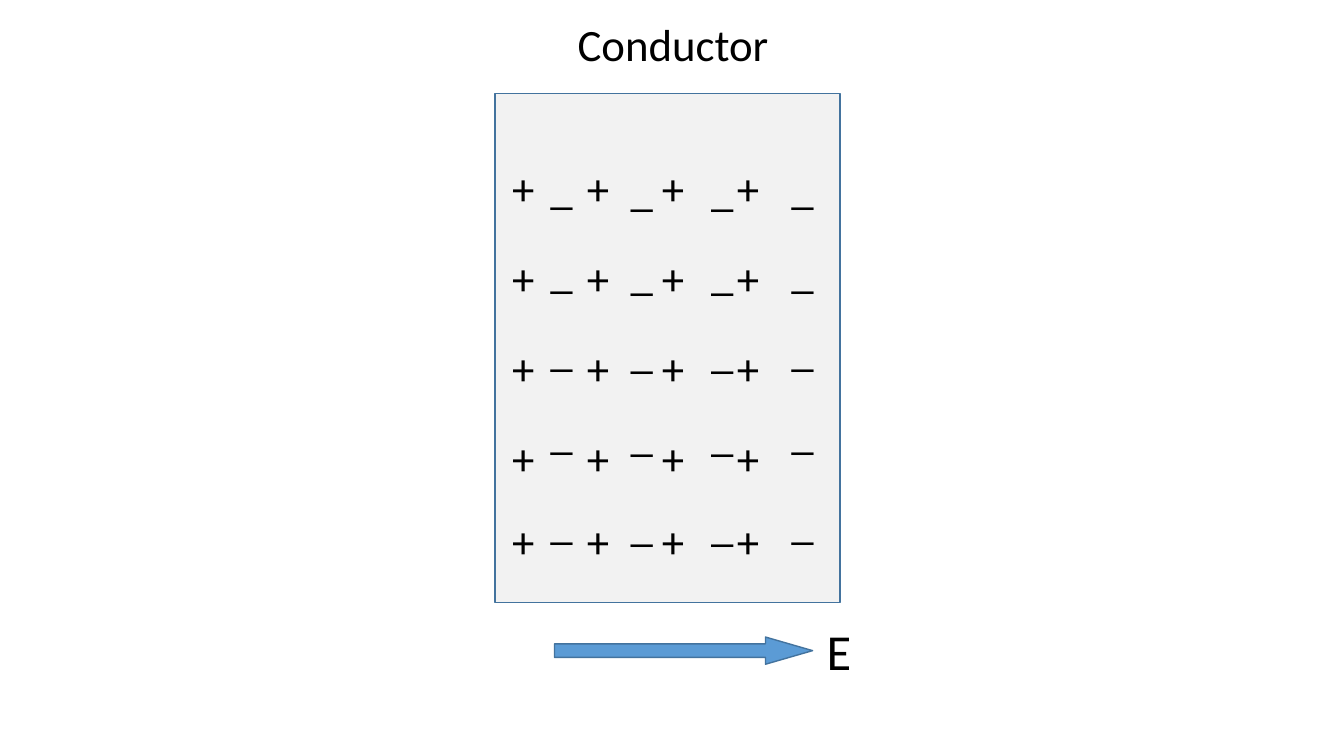
from pptx import Presentation
from pptx.dml.color import RGBColor
from pptx.enum.shapes import MSO_SHAPE
from pptx.enum.text import MSO_AUTO_SIZE
from pptx.util import Inches, Pt

FONT = "Calibri"
BLACK, EDGE = "000000", "43739E"
TITLE = ("Conductor", (5.63, 0.12, 2.12, 0.64), 32)
FIELD_LABEL = ("E", (8.1, 6.1, 0.45, 0.71), 36)
CONDUCTOR = (MSO_SHAPE.RECTANGLE, (4.91, 0.93, 3.42, 5.05), "F2F2F2")
FIELD_ARROW = (MSO_SHAPE.RIGHT_ARROW, (5.5, 6.32, 2.56, 0.27), "5B9BD5")
CHARGES = [
    {"sign": "+", "left": 4.98, "pitch": 0.743, "width": 0.38, "wrap": True,
     "tops": [1.55, 2.44, 3.33, 4.22, 5.05], "shifts": [0, 0, 0, 0]},
    {"sign": "_", "left": 5.36, "pitch": 0.797, "width": 0.43, "wrap": False,
     "tops": [1.54, 2.37, 3.14, 3.97, 4.86], "shifts": [0, 0.02, 0.02, 0]},
]
CHARGE_HEIGHT, CHARGE_SIZE = 0.64, 32

presentation = Presentation()
presentation.slide_width = Inches(13.33)
presentation.slide_height = Inches(7.5)
slide = presentation.slides.add_slide(presentation.slide_layouts[6])


def color(hex_code):
    return RGBColor.from_string(hex_code)


def add_outlined(preset, box, fill):
    outlined = slide.shapes.add_shape(preset, *map(Inches, box))
    outlined.shadow.inherit = False
    outlined.fill.solid()
    outlined.fill.fore_color.rgb = color(fill)
    outlined.line.color.rgb = color(EDGE)
    outlined.line.width = Pt(1)
    return outlined


def add_label(words, box, size, wrap=False):
    frame = slide.shapes.add_textbox(*map(Inches, box)).text_frame
    frame.word_wrap = wrap
    frame.auto_size = MSO_AUTO_SIZE.SHAPE_TO_FIT_TEXT
    run = frame.paragraphs[0].add_run()
    run.text = words
    run.font.name = FONT
    run.font.size = Pt(size)
    run.font.color.rgb = color(BLACK)


add_outlined(*CONDUCTOR)
for charge in CHARGES:
    for column, shift in enumerate(charge["shifts"]):
        left = charge["left"] + column * charge["pitch"]
        for top in charge["tops"]:
            box = (left, top + shift, charge["width"], CHARGE_HEIGHT)
            add_label(charge["sign"], box, CHARGE_SIZE, charge["wrap"])

field_arrow = add_outlined(*FIELD_ARROW)
field_arrow.adjustments[0] = 0.5
field_arrow.adjustments[1] = 1.73
add_label(*FIELD_LABEL)
add_label(*TITLE)

presentation.save("out.pptx")
